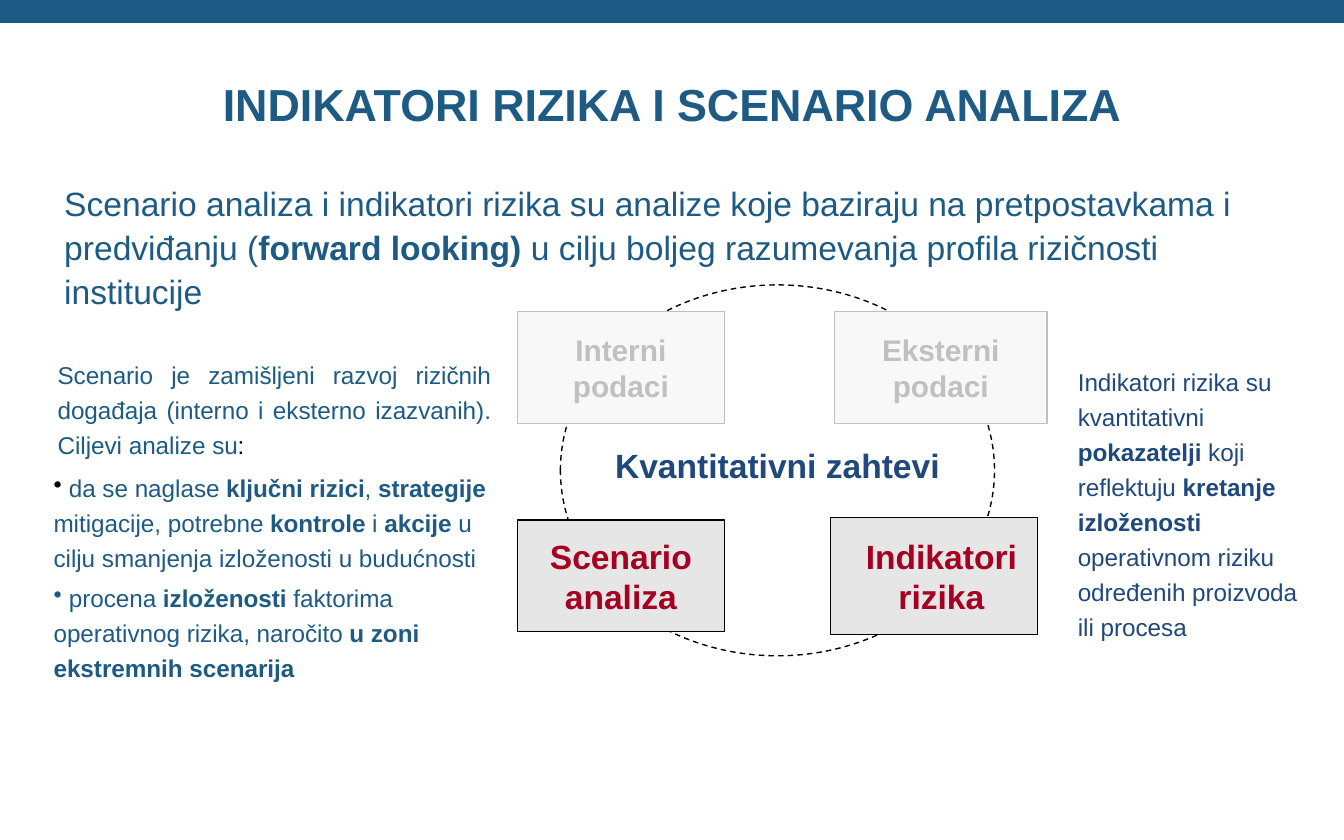
from dataclasses import dataclass
from typing import Any, NamedTuple

import pptx
import pptx.dml.color
import pptx.enum.dml
import pptx.enum.shapes
import pptx.enum.text
import pptx.util
from lxml import etree

Inches = pptx.util.Inches
Pt = pptx.util.Pt
Shape = pptx.enum.shapes.MSO_SHAPE
Align = pptx.enum.text.PP_ALIGN
Anchor = pptx.enum.text.MSO_ANCHOR
Fit = pptx.enum.text.MSO_AUTO_SIZE


@dataclass(frozen=True)
class Theme:
    face: str = "Arial"
    blue: str = "1D5B85"
    navy: str = "1F497D"
    red: str = "A50021"
    black: str = "000000"
    gray: str = "C0C0C0"
    pale: str = "F8F8F8"
    shade: str = "E6E6E6"
    title: float = 24
    lead: float = 18
    label: float = 16
    body: float = 13


THEME = Theme()


class Span(NamedTuple):
    text: str  # stars switch bold on and off
    color: str


class Area(NamedTuple):
    left: float
    top: float
    width: float
    height: float


@dataclass(frozen=True)
class Block:
    area: Area
    size: float
    paras: list[list[Span]]
    format: dict[str, Any]
    inset: float = 0.1
    bullet: bool = False
    wrap: bool = True


@dataclass(frozen=True)
class Card:
    area: Area
    text: str
    size: float
    color: str
    fill: str
    line: str
    inset: float = 0.11


def rgb(code: str) -> pptx.dml.color.RGBColor:
    return pptx.dml.color.RGBColor.from_string(code)


def place(area: Area) -> list[int]:
    return [Inches(side) for side in area]


def apply(target: Any, values: dict[str, Any]) -> None:
    for name, value in values.items():
        setattr(target, name, value)


def write(para: Any, spans: list[Span], size: float) -> None:
    for span in spans:
        for spot, part in enumerate(span.text.split("*")):
            if part:
                run = para.add_run()
                run.text = part
                apply(run.font, {"name": THEME.face, "size": Pt(size), "bold": spot % 2 == 1})
                run.font.color.rgb = rgb(span.color)


def add_bullet(para: Any) -> None:
    props = para._p.get_or_add_pPr()
    apply_indent = {"marL": "0", "indent": "0"}
    for name, value in apply_indent.items():
        props.set(name, value)
    space = props.nsmap["a"]
    etree.SubElement(props, f"{{{space}}}buChar", char="•")


def add_block(slide: Any, block: Block) -> None:
    frame = slide.shapes.add_textbox(*place(block.area)).text_frame
    apply(frame, {
        "word_wrap": block.wrap, "auto_size": Fit.SHAPE_TO_FIT_TEXT,
        "margin_left": Inches(block.inset), "margin_right": Inches(block.inset),
    })
    for spot, spans in enumerate(block.paras):
        para = frame.add_paragraph() if spot else frame.paragraphs[0]
        if block.bullet:
            add_bullet(para)
        apply(para, block.format)
        if spot:
            para.space_before = Pt(2.6)
        write(para, spans, block.size)


def add_shape(slide: Any, kind: Any, area: Area, fill: str = "", line: str = "") -> Any:
    shape = slide.shapes.add_shape(kind, *place(area))
    shape.shadow.inherit = False
    for part, color in ((shape.fill, fill), (shape.line.fill, line)):
        if color:
            part.solid()
            part.fore_color.rgb = rgb(color)
        else:
            part.background()
    if line:
        shape.line.width = Pt(0.75)
    return shape


def add_card(slide: Any, card: Card) -> None:
    frame = add_shape(slide, Shape.RECTANGLE, card.area, card.fill, card.line).text_frame
    apply(frame, {
        "word_wrap": True, "vertical_anchor": Anchor.MIDDLE,
        "margin_left": Inches(card.inset), "margin_right": Inches(0.11),
    })
    para = frame.paragraphs[0]
    para.alignment = Align.CENTER
    write(para, [Span(f"*{card.text}*", card.color)], card.size)


FADED = {"size": THEME.label, "color": THEME.gray, "fill": THEME.pale, "line": THEME.gray}
VIVID = {"size": THEME.lead, "color": THEME.red, "fill": THEME.shade, "line": THEME.black}
CARDS = [
    Card(Area(3.85, 2.32, 1.54, 0.83), "Interni podaci", **FADED),
    Card(Area(6.21, 2.32, 1.58, 0.83), "Eksterni podaci", **FADED),
    Card(Area(3.85, 3.87, 1.54, 0.83), "Scenario analiza", **VIVID),
    Card(Area(6.18, 3.85, 1.54, 0.87), "Indikatori rizika", inset=0.22, **VIVID),
]

BLOCKS = [
    # Lead statement
    Block(Area(0.38, 1.28, 9.33, 1.1), THEME.lead, [[Span(
        "Scenario analiza i indikatori rizika su analize koje baziraju na pretpostavkama i "
        "predviđanju (*forward looking) *u cilju boljeg razumevanja profila rizičnosti institucije",
        THEME.blue)]], {"line_spacing": 1.1}),
    # Scenario column
    Block(Area(0.33, 2.59, 3.42, 0.89), THEME.body, [[
        Span("Scenario je zamišljeni razvoj rizičnih događaja (interno i eksterno izazvanih). "
             "Ciljevi analize su", THEME.blue),
        Span(":", THEME.black)]], {"line_spacing": 1.2, "alignment": Align.JUSTIFY}),
    Block(Area(0.3, 3.43, 3.45, 1.72), THEME.body, [
        [Span(" ", THEME.black),
         Span("da se naglase *ključni rizici*, *strategije* mitigacije, potrebne *kontrole *i "
              "*akcije* u cilju smanjenja izloženosti u budućnosti", THEME.blue)],
        [Span(" procena *izloženosti* faktorima operativnog rizika, naročito "
              "*u zoni ekstremnih scenarija*", THEME.blue)],
    ], {"line_spacing": 1.2}, bullet=True),
    # Centre label
    Block(Area(4.46, 3.26, 2.65, 0.41), THEME.lead,
          [[Span("*Kvantitativni zahtevi*", THEME.navy)]],
          {"alignment": Align.CENTER}, inset=0.11, wrap=False),
    # Indicator column
    Block(Area(7.91, 2.64, 1.97, 2.21), THEME.body, [[Span(
        "Indikatori rizika su kvantitativni *pokazatelji *koji reflektuju *kretanje izloženosti *"
        "operativnom riziku određenih proizvoda ili procesa", THEME.navy)]],
        {"line_spacing": 1.2}, inset=0.11),
]


def main() -> None:
    deck = pptx.Presentation()
    apply(deck, {"slide_width": Inches(10), "slide_height": Inches(6.25)})
    slide = deck.slides.add_slide(deck.slide_layouts[5])

    # Top band and title
    add_shape(slide, Shape.RECTANGLE, Area(0, 0, 10, 0.17), THEME.blue)
    title = slide.shapes.title
    apply(title, dict(zip(("left", "top", "width", "height"), place(Area(0.5, 0.25, 9, 1.04)))))
    title.text_frame.vertical_anchor = Anchor.MIDDLE
    head = title.text_frame.paragraphs[0]
    head.alignment = Align.CENTER
    write(head, [Span("*INDIKATORI RIZIKA I SCENARIO ANALIZA*", THEME.blue)], THEME.title)

    # Dashed ring with its four cards
    ring = add_shape(slide, Shape.OVAL, Area(4.17, 2.12, 3.23, 2.76), line=THEME.black)
    ring.line.dash_style = pptx.enum.dml.MSO_LINE.DASH
    for card in CARDS:
        add_card(slide, card)

    # Texts
    for block in BLOCKS:
        add_block(slide, block)

    deck.save("out.pptx")


if __name__ == "__main__":
    main()
